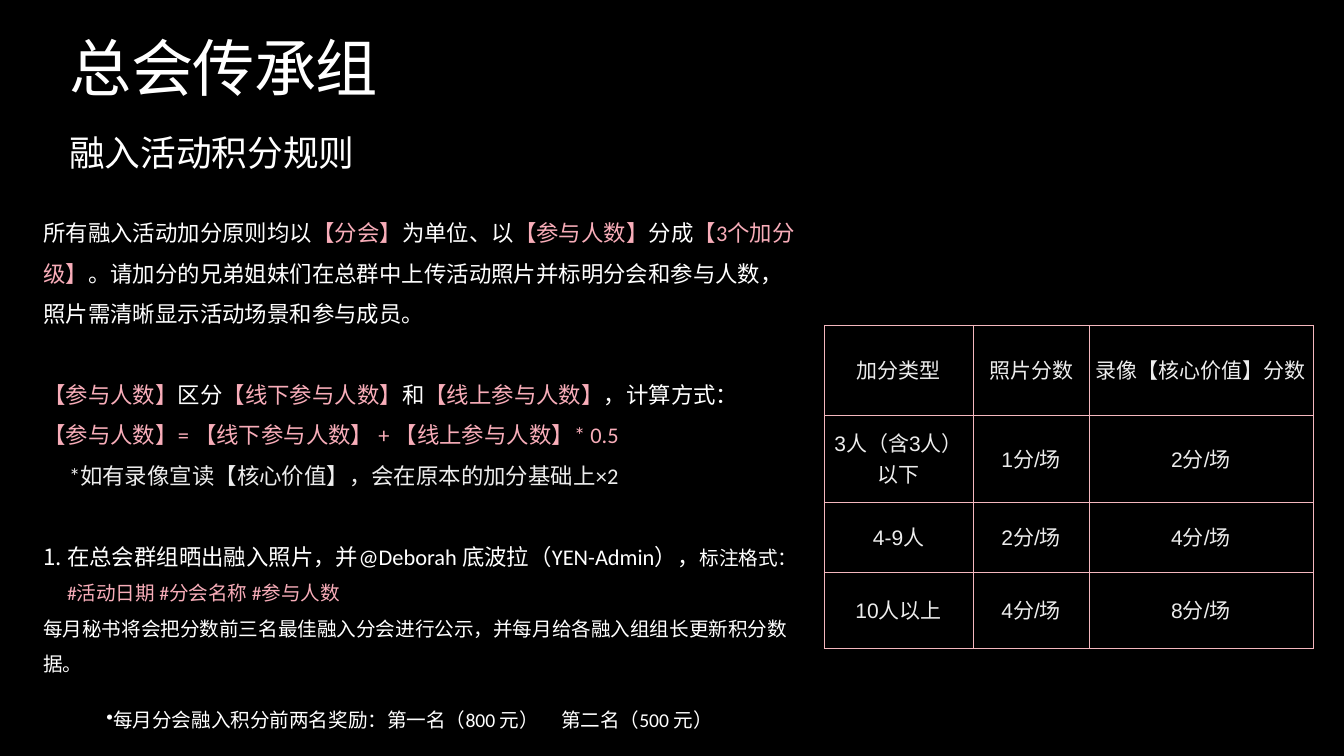
from dataclasses import dataclass

from lxml import etree
from pptx import Presentation
from pptx.dml.color import RGBColor
from pptx.enum.text import MSO_ANCHOR, PP_ALIGN
from pptx.oxml.ns import qn
from pptx.util import Cm, Pt

TOP, MIDDLE = MSO_ANCHOR.TOP, MSO_ANCHOR.MIDDLE
LEFT, CENTER = PP_ALIGN.LEFT, PP_ALIGN.CENTER


@dataclass(frozen=True)
class Theme:
    background: str = "000000"
    white: str = "FFFFFF"
    soft: str = "EDEDED"
    pink: str = "F8ADB9"
    border: str = "F4B7BE"
    font: str = "Calibri"
    table_font: str = "Arial"
    title: int = 89
    subtitle: int = 51
    body: int = 32
    note: int = 28
    cell: int = 30
    blank_line: int = 58
    border_width: float = 0.5


def child(parent, tag, **attrs):
    return etree.SubElement(parent, qn(tag), {k: str(v) for k, v in attrs.items()})


def set_all(obj, values):
    for name, value in values.items():
        setattr(obj, name, value)


class SlideBuilder:
    def __init__(self, prs, theme):
        self.theme = theme
        self.slide = prs.slides.add_slide(prs.slide_layouts[6])
        fill = self.slide.background.fill
        fill.solid()
        fill.fore_color.rgb = RGBColor.from_string(theme.background)

    def run(self, p, text, size, color, font=None, spacing=None):
        r = p.add_run()
        r.text = text
        set_all(r.font, {"size": Pt(size), "name": font or self.theme.font})
        r.font.color.rgb = RGBColor.from_string(color)
        if spacing is not None:
            r.font._element.set("spc", str(spacing))

    def paragraph(self, p, runs, fmt=None, margin=0, indent=0, bullet=None, tab=None):
        """Fill p with (text, size, colour, ...) runs; bullet is a (tag, attributes) pair."""
        set_all(p, {"alignment": LEFT, **(fmt or {})})
        pPr = p._p.get_or_add_pPr()
        pPr.set("marL", str(Cm(margin)))
        pPr.set("indent", str(Cm(indent)))
        if bullet:
            child(pPr, bullet[0], **bullet[1])
        if tab:
            child(child(pPr, "a:tabLst"), "a:tab", pos=Cm(tab), algn="l")
        for run in runs:
            self.run(p, *run)

    def text(self, left, top, width, height, paragraphs, inset=0.15):
        sp = self.slide.shapes.add_textbox(Cm(left), Cm(top), Cm(width), Cm(height))
        tf = sp.text_frame
        sides = ("margin_left", "margin_top", "margin_right", "margin_bottom")
        set_all(tf, {"word_wrap": True, "vertical_anchor": TOP,
                     **dict.fromkeys(sides, Cm(inset))})
        for i, spec in enumerate(paragraphs):
            p = tf.add_paragraph() if i else tf.paragraphs[0]
            self.paragraph(p, **spec)

    def cell(self, cell, text):
        set_all(cell, {"vertical_anchor": MIDDLE, "margin_left": Cm(0.03),
                       "margin_top": Cm(0.03), "margin_right": Cm(0.03),
                       "margin_bottom": Cm(0.13)})
        t = self.theme
        self.paragraph(cell.text_frame.paragraphs[0],
                       [(text, t.cell, t.soft, t.table_font)], {"alignment": CENTER})
        tcPr = cell._tc.get_or_add_tcPr()
        for side in ("a:lnL", "a:lnR", "a:lnT", "a:lnB"):
            ln = child(tcPr, side, w=Pt(t.border_width))
            child(child(ln, "a:solidFill"), "a:srgbClr", val=t.border)
        cell.fill.background()

    def table(self, left, top, widths, heights, rows):
        frame = self.slide.shapes.add_table(
            len(rows), len(widths), Cm(left), Cm(top), Cm(sum(widths)), Cm(sum(heights)))
        table = frame.table
        set_all(table, {"first_row": False, "horz_banding": False})
        for column, width in zip(table.columns, widths):
            column.width = Cm(width)
        for row, height, texts in zip(table.rows, heights, rows):
            row.height = Cm(height)
            for cell, text in zip(row.cells, texts):
                self.cell(cell, text)


def rules(t):
    """Paragraphs of the scoring rules."""
    def white(text, size=t.body):
        return text, size, t.white

    def pink(text, size=t.body):
        return text, size, t.pink

    loose = {"line_spacing": 1.5}
    section = {**loose, "space_before": Pt(t.blank_line)}
    return [
        {"fmt": loose, "runs": [
            white("所有融入活动加分原则均以"), pink("【分会】"), white("为单位、以"),
            pink("【参与人数】"), white("分成"), pink("【3个加分级】"),
            white("。请加分的兄弟姐妹们在总群中上传活动照片并标明分会和参与人数，"
                  "照片需清晰显示活动场景和参与成员。")]},
        {"fmt": section, "runs": [
            pink("【参与人数】"), white("区分"), pink("【线下参与人数】"), white("和"),
            pink("【线上参与人数】"), white("，计算方式：")]},
        {"fmt": loose, "runs": [
            pink("【参与人数】= 【线下参与人数】 + 【线上参与人数】* 0.5")]},
        {"fmt": loose, "margin": 1.3, "runs": [
            ("*如有录像宣读【核心价值】，会在原本的加分基础上×2", t.body, t.soft)]},
        {"fmt": section, "margin": 1.2, "indent": -1.2,
         "bullet": ("a:buAutoNum", {"type": "arabicPeriod"}), "runs": [
             white("在总会群组晒出融入照片，并@Deborah 底波拉（YEN-Admin），"),
             white("标注格式：", t.note), pink("#活动日期 #分会名称 #参与人数", t.note)]},
        {"fmt": loose, "runs": [
            white("每月秘书将会把分数前三名最佳融入分会进行公示，"
                  "并每月给各融入组组长更新积分数据。", t.note)]},
        {"fmt": {"level": 1, "space_before": Pt(47)}, "margin": 2.54, "indent": 0.64,
         "bullet": ("a:buChar", {"char": "•"}), "tab": 26.1, "runs": [
             white("每月分会融入积分前两名奖励：第一名（800 元）\t第二名（500 元）", t.note)]},
    ]


def main():
    prs = Presentation()
    set_all(prs, {"slide_width": Cm(67.74), "slide_height": Cm(38.1)})
    t = Theme()
    s = SlideBuilder(prs, t)
    s.text(3.35, 1.75, 27.15, 4.7, [
        {"fmt": {"line_spacing": 0.9},
         "runs": [("总会传承组", t.title, t.white, t.font, -100)]}])
    s.text(3.35, 6.45, 27.15, 2.8,
           [{"runs": [("融入活动积分规则", t.subtitle, t.white)]}], inset=0.13)
    s.text(2.03, 10.24, 38.68, 26.97, rules(t))
    s.table(41.53, 16.38, [7.52, 5.84, 11.28], [4.55, 4.39, 3.53, 3.84], [
        ("加分类型", "照片分数", "录像【核心价值】分数"),
        ("3人（含3人）以下", "1分/场", "2分/场"),
        ("4-9人", "2分/场", "4分/场"),
        ("10人以上", "4分/场", "8分/场"),
    ])
    prs.save("out.pptx")


if __name__ == "__main__":
    main()
